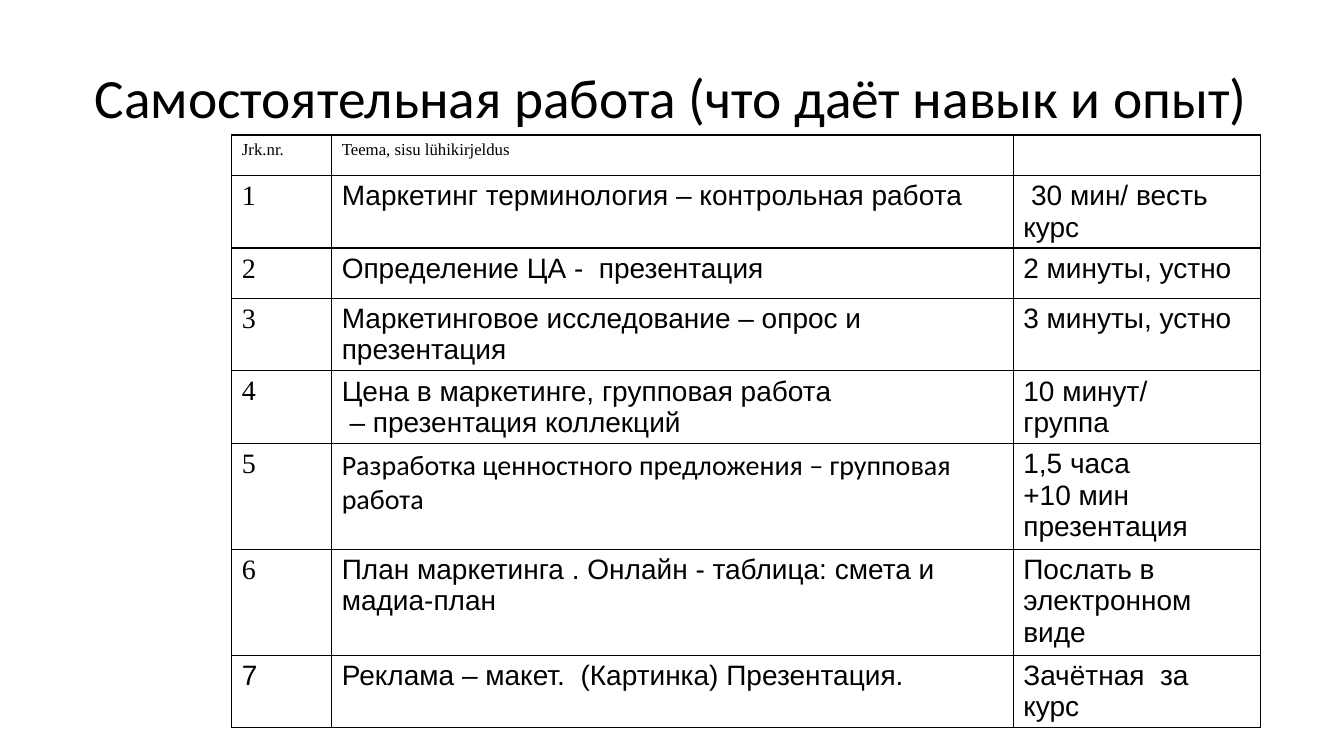
from lxml import etree
from pptx import Presentation
from pptx.dml.color import RGBColor
from pptx.enum import text
from pptx.oxml import ns
from pptx.util import Inches, Pt

COLORS = {"ink": "000000"}
SERIF, SANS, BODY = "Times New Roman", "Arial", "Calibri"

COLUMN_WIDTHS = [0.99, 6.76, 2.45]
ROW_HEIGHTS = [0.4, 0.72, 0.5, 0.72, 0.72, 1.03, 1.03, 0.72]
HEADER = ["Jrk.nr.", "Teema, sisu lühikirjeldus", ""]
TASKS = [
    ["1", "Маркетинг терминология – контрольная работа", " 30 мин/ весть курс"],
    ["2", "Определение ЦА -  презентация", "2 минуты, устно"],
    ["3", "Маркетинговое исследование – опрос и презентация", "3 минуты, устно"],
    ["4", "Цена в маркетинге, групповая работа\n – презентация коллекций",
     "10 минут/\nгруппа"],
    ["5", "Разработка ценностного предложения – групповая работа",
     "1,5 часа\n+10 мин презентация"],
    ["6", "План маркетинга . Онлайн - таблица: смета и мадиа-план",
     "Послать в электронном виде"],
    ["7", "Реклама – макет.  (Картинка) Презентация.", "Зачётная  за курс"],
]
# Cells (row, column) whose font differs from that of their column
FONT_EXCEPTIONS = {(5, 1): BODY, (7, 0): SANS}


def style_text(frame, font_name, size):
    for paragraph in frame.paragraphs:
        for font in [paragraph.font] + [run.font for run in paragraph.runs]:
            font.name = font_name
            font.size = Pt(size)
            font.color.rgb = RGBColor.from_string(COLORS["ink"])


def add_title(slide, title):
    box = slide.shapes.add_textbox(Inches(0.84), Inches(0.33), Inches(11.67), Inches(1.33))
    frame = box.text_frame
    frame.word_wrap = True
    frame.vertical_anchor = text.MSO_ANCHOR.MIDDLE
    frame.text = title
    frame.paragraphs[0].line_spacing = 0.9
    style_text(frame, BODY, 39.6)


def add_borders(cell):
    properties = cell._tc.get_or_add_tcPr()
    for side in ("lnL", "lnR", "lnT", "lnB"):
        line = etree.SubElement(properties, ns.qn(f"a:{side}"), w=str(Pt(1)))
        fill = etree.SubElement(line, ns.qn("a:solidFill"))
        etree.SubElement(fill, ns.qn("a:srgbClr"), val=COLORS["ink"])


def cell_font(row, column):
    """Return the font name and size of a table cell."""
    if row == 0:
        return SERIF, 12
    default = SERIF if column == 0 else SANS
    return FONT_EXCEPTIONS.get((row, column), default), 20


def add_task_table(slide, rows):
    frame = slide.shapes.add_table(
        len(rows), len(COLUMN_WIDTHS), Inches(2.3), Inches(1.34),
        Inches(sum(COLUMN_WIDTHS)), Inches(sum(ROW_HEIGHTS)))
    table = frame.table
    table.first_row = table.horz_banding = False
    for column, width in zip(table.columns, COLUMN_WIDTHS):
        column.width = Inches(width)
    for table_row, height in zip(table.rows, ROW_HEIGHTS):
        table_row.height = Inches(height)
    for row, values in enumerate(rows):
        for column, value in enumerate(values):
            cell = table.cell(row, column)
            cell.text_frame.text = value
            style_text(cell.text_frame, *cell_font(row, column))
            # Without a bottom margin the wrapped lines fit the row heights
            cell.margin_top, cell.margin_bottom = Inches(0.05), 0
            add_borders(cell)
            cell.fill.background()


def main():
    presentation = Presentation()
    presentation.slide_width = Inches(13.33)
    presentation.slide_height = Inches(7.5)
    slide = presentation.slides.add_slide(presentation.slide_layouts[6])
    add_title(slide, "Самостоятельная работа (что даёт навык и опыт)")
    add_task_table(slide, [HEADER] + TASKS)
    presentation.save("out.pptx")


if __name__ == "__main__":
    main()
